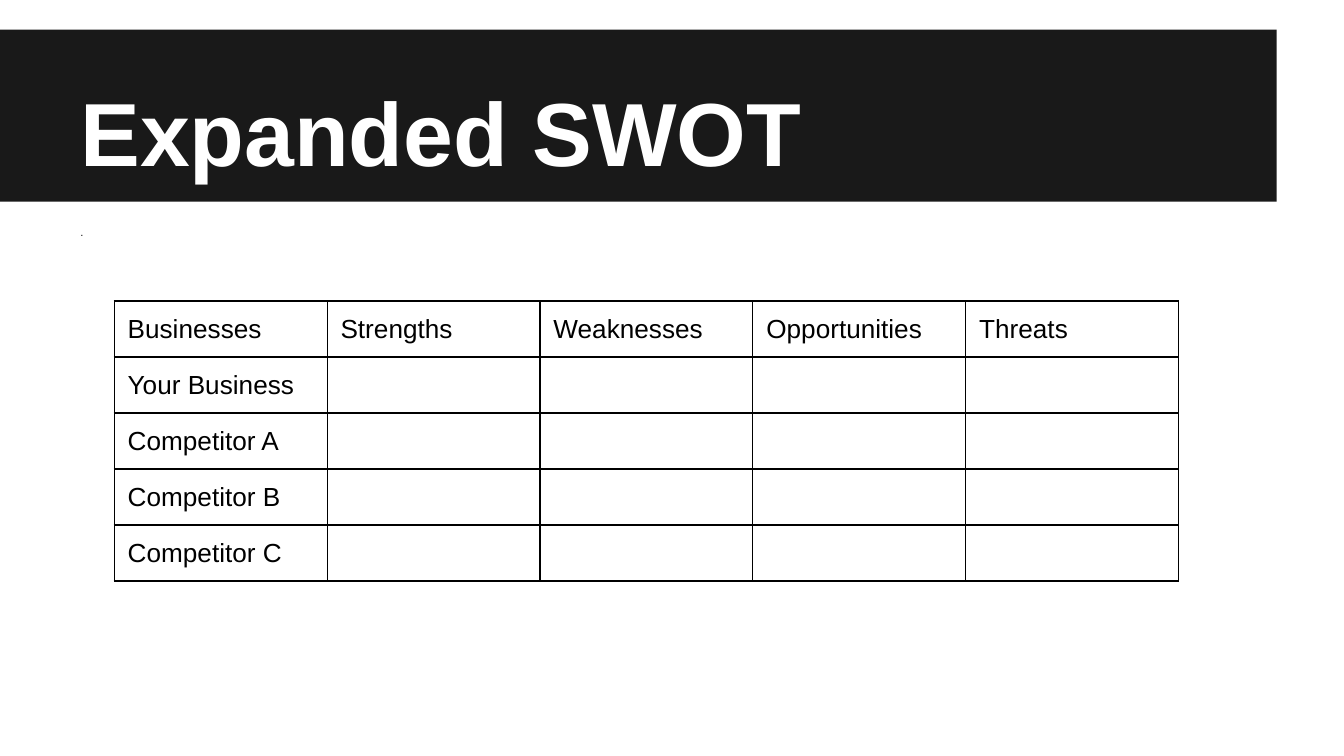
from dataclasses import dataclass

from lxml import etree
from pptx import Presentation
from pptx.dml.color import RGBColor
from pptx.enum.shapes import MSO_SHAPE
from pptx.enum.text import MSO_ANCHOR
from pptx.oxml.ns import qn
from pptx.util import Inches, Pt

RECT = MSO_SHAPE.RECTANGLE
TOP, BOTTOM = MSO_ANCHOR.TOP, MSO_ANCHOR.BOTTOM

WIDTH = 10
HEIGHT = WIDTH * 9 / 16
FONT = "Arial"
INSET = 0.1
COLORS = {"band": "191919", "title": "FFFFFF", "grid": "000000"}

# Table grid
HEADERS = ["Businesses", "Strengths", "Weaknesses", "Opportunities", "Threats"]
BUSINESSES = ["Your Business", "Competitor A", "Competitor B", "Competitor C"]
ROWS = [HEADERS] + [[name] + [""] * (len(HEADERS) - 1) for name in BUSINESSES]
TABLE_LEFT, TABLE_TOP, TABLE_WIDTH = 0.85, 2.24, 7.92
ROW_HEIGHT = 1.25 / 3
BORDER = Pt(0.75)


@dataclass
class TextBlock:
    text: str
    top: float
    height: float
    size: float
    color: str
    bold: bool = False
    anchor: MSO_ANCHOR = TOP
    inset_top: float = INSET


BLOCKS = [
    TextBlock("Expanded SWOT", 0.22, 1.25, 48, "title", True, BOTTOM),
    TextBlock(".", 1.6, 3.79, 6, "band", inset_top=0.15),
]


def style(p, size: float, color: str, bold: bool = False) -> None:
    p.font.name = FONT
    p.font.size = Pt(size)
    p.font.bold = bold
    p.font.color.rgb = RGBColor.from_string(COLORS[color])


def set_margins(box, top: float, bottom: float) -> None:
    box.margin_left = box.margin_right = Inches(INSET)
    box.margin_top, box.margin_bottom = Inches(top), Inches(bottom)


def draw_band(s) -> None:
    sp = s.shapes.add_shape(RECT, 0, Inches(0.22), Inches(WIDTH * 0.95), Inches(1.28))
    sp.shadow.inherit = False
    sp.fill.solid()
    sp.fill.fore_color.rgb = RGBColor.from_string(COLORS["band"])
    sp.line.fill.background()


def draw_text(s, block: TextBlock) -> None:
    sp = s.shapes.add_textbox(Inches(WIDTH * 0.05), Inches(block.top),
                              Inches(WIDTH * 0.9), Inches(block.height))
    tf = sp.text_frame
    tf.word_wrap = True
    tf.vertical_anchor = block.anchor
    set_margins(tf, block.inset_top, INSET)
    p = tf.paragraphs[0]
    p.text = block.text
    style(p, block.size, block.color, block.bold)


def add_borders(cell) -> None:
    tc_pr = cell._tc.get_or_add_tcPr()
    for i, side in enumerate(("lnL", "lnR", "lnT", "lnB")):
        ln = etree.Element(qn(f"a:{side}"), w=str(BORDER))
        fill = etree.SubElement(ln, qn("a:solidFill"))
        etree.SubElement(fill, qn("a:srgbClr"), val=COLORS["grid"])
        tc_pr.insert(i, ln)  # borders come before the cell's fill


def draw_table(s) -> None:
    n_rows, n_cols = len(ROWS), len(HEADERS)
    table = s.shapes.add_table(
        n_rows, n_cols, Inches(TABLE_LEFT), Inches(TABLE_TOP),
        Inches(TABLE_WIDTH), Inches(n_rows * ROW_HEIGHT)).table
    table.first_row = table.horz_banding = False
    for col in table.columns:
        col.width = Inches(TABLE_WIDTH / n_cols)
    for row, texts in zip(table.rows, ROWS):
        row.height = Inches(ROW_HEIGHT)
        for cell, text in zip(row.cells, texts):
            cell.fill.background()
            add_borders(cell)
            p = cell.text_frame.paragraphs[0]
            style(p, 14, "grid")
            if text:
                set_margins(cell, INSET, INSET / 2)
                p.text = text
            else:
                set_margins(cell, 0, 0)


def main() -> None:
    prs = Presentation()
    prs.slide_width, prs.slide_height = Inches(WIDTH), Inches(HEIGHT)
    s = prs.slides.add_slide(prs.slide_layouts[6])

    # Title band, then title and body text
    draw_band(s)
    for block in BLOCKS:
        draw_text(s, block)

    # SWOT comparison
    draw_table(s)
    prs.save("out.pptx")


if __name__ == "__main__":
    main()
